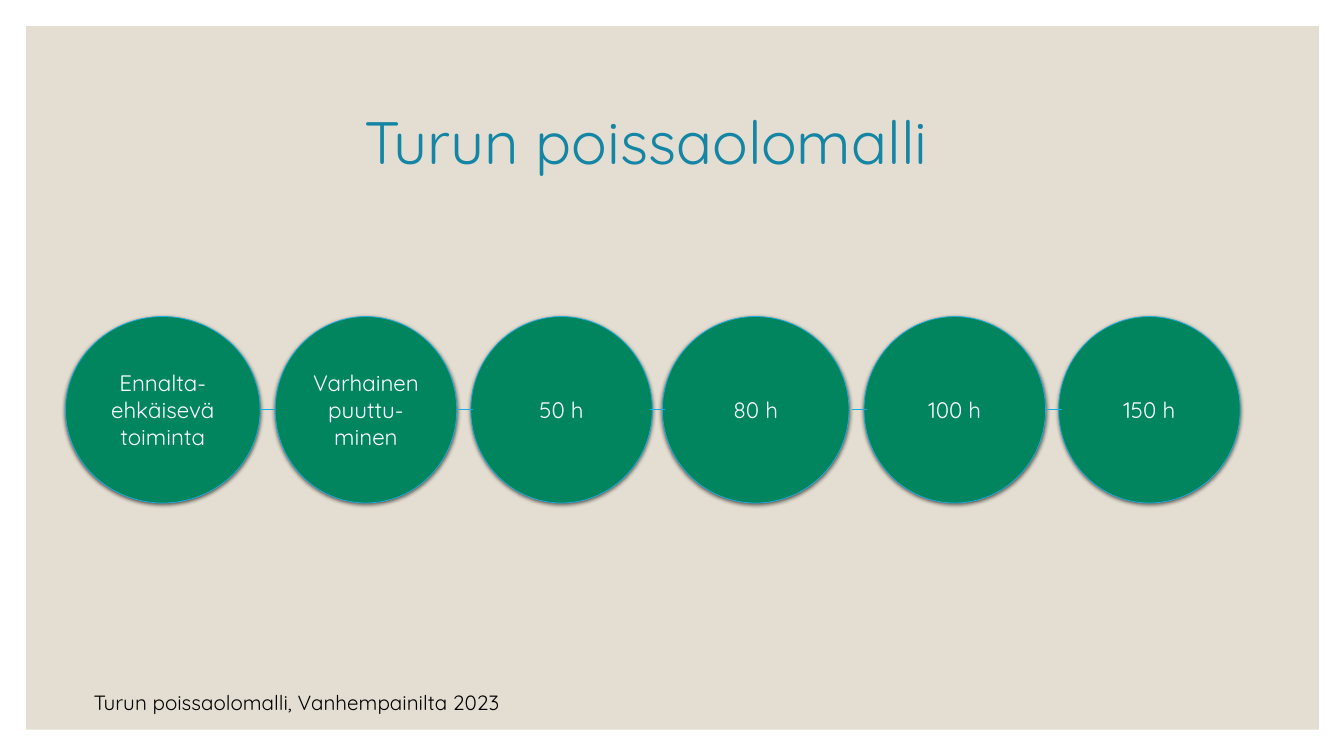
from dataclasses import dataclass

from lxml import etree
from pptx import Presentation
from pptx import util as u
from pptx.dml.color import RGBColor
from pptx.enum import shapes, text
from pptx.oxml import ns
from pptx.slide import Slide

BEIGE = RGBColor(0xE3, 0xDE, 0xD1)
TEAL = RGBColor(0x14, 0x85, 0xA4)
GREEN = RGBColor(0x00, 0x85, 0x5F)
BLUE = RGBColor(0x1C, 0xAD, 0xE4)
WHITE = RGBColor(0xFF, 0xFF, 0xFF)
BLACK = RGBColor(0x00, 0x00, 0x00)
FONT = "Quicksand"

STAGE_TOP = 3.14
STAGE_HEIGHT = 1.85
LINK_Y = 4.06
LINK_LENGTH = 0.15


@dataclass(frozen=True)
class Stage:
    left: float
    label: str
    width: float = 1.8


STAGES = [
    Stage(0.65, "Ennalta-\nehkäisevä toiminta", 1.93),
    Stage(2.73, "Varhainen puuttu-minen"),
    Stage(4.67, "50 h"),
    Stage(6.57, "80 h", 1.85),
    Stage(8.57, "100 h"),
    Stage(10.5, "150 h"),
]
LINK_LEFTS = [2.58, 4.54, 6.45, 8.45, 10.38]


def write_text(frame: text.MSO_ANCHOR, content: str, size: float, color: RGBColor,
               alignment: text.PP_ALIGN = text.PP_ALIGN.LEFT) -> None:
    frame.word_wrap = True
    frame.text = content
    for paragraph in frame.paragraphs:
        paragraph.alignment = alignment
        paragraph.font.name = FONT
        paragraph.font.size = u.Pt(size)
        paragraph.font.color.rgb = color


def add_background(slide: Slide) -> None:
    panel = slide.shapes.add_shape(
        shapes.MSO_SHAPE.RECTANGLE,
        u.Inches(0.26), u.Inches(0.26), u.Inches(12.82), u.Inches(6.98))
    panel.shadow.inherit = False
    panel.fill.solid()
    panel.fill.fore_color.rgb = BEIGE
    panel.line.fill.background()


def add_title(slide: Slide) -> None:
    box = slide.shapes.add_textbox(
        u.Inches(3.62), u.Inches(1.04), u.Inches(7.58), u.Inches(0.74))
    frame = box.text_frame
    frame.margin_left = frame.margin_right = 0
    frame.margin_top = frame.margin_bottom = 0
    write_text(frame, "Turun poissaolomalli", 42.7, TEAL)


def add_footer(slide: Slide) -> None:
    box = slide.shapes.add_textbox(
        u.Inches(0.83), u.Inches(6.8), u.Inches(6.67), u.Inches(0.35))
    write_text(box.text_frame, "Turun poissaolomalli, Vanhempainilta 2023", 14.7, BLACK)


def add_stage(slide: Slide, stage: Stage) -> None:
    circle = slide.shapes.add_shape(
        shapes.MSO_SHAPE.FLOWCHART_CONNECTOR,
        u.Inches(stage.left), u.Inches(STAGE_TOP),
        u.Inches(stage.width), u.Inches(STAGE_HEIGHT))
    circle.fill.solid()
    circle.fill.fore_color.rgb = GREEN
    circle.line.color.rgb = BLUE
    circle.line.width = u.Pt(0.5)
    circle.shadow.inherit = False
    effects = circle.element.spPr.find(ns.qn("a:effectLst"))
    shadow = etree.SubElement(
        effects, ns.qn("a:outerShdw"), blurRad=str(u.Pt(3)), dist=str(u.Pt(1)),
        dir="5400000", algn="ctr", rotWithShape="0")
    color = etree.SubElement(shadow, ns.qn("a:srgbClr"), val=str(BLACK))
    etree.SubElement(color, ns.qn("a:alpha"), val="63000")
    circle.text_frame.vertical_anchor = text.MSO_ANCHOR.MIDDLE
    write_text(circle.text_frame, stage.label, 16, WHITE, text.PP_ALIGN.CENTER)


def add_link(slide: Slide, left: float) -> None:
    link = slide.shapes.add_connector(
        shapes.MSO_CONNECTOR.STRAIGHT,
        u.Inches(left + LINK_LENGTH), u.Inches(LINK_Y), u.Inches(left), u.Inches(LINK_Y))
    link.line.color.rgb = BLUE
    link.line.width = u.Pt(1)
    etree.SubElement(link.element.spPr, ns.qn("a:effectLst"))


def main() -> None:
    presentation = Presentation()
    presentation.slide_width = u.Inches(13.33)
    presentation.slide_height = u.Inches(7.5)
    slide = presentation.slides.add_slide(presentation.slide_layouts[6])
    add_background(slide)
    add_title(slide)
    for stage in STAGES:
        add_stage(slide, stage)
    for left in LINK_LEFTS:
        add_link(slide, left)
    add_footer(slide)
    presentation.save("out.pptx")


if __name__ == "__main__":
    main()
